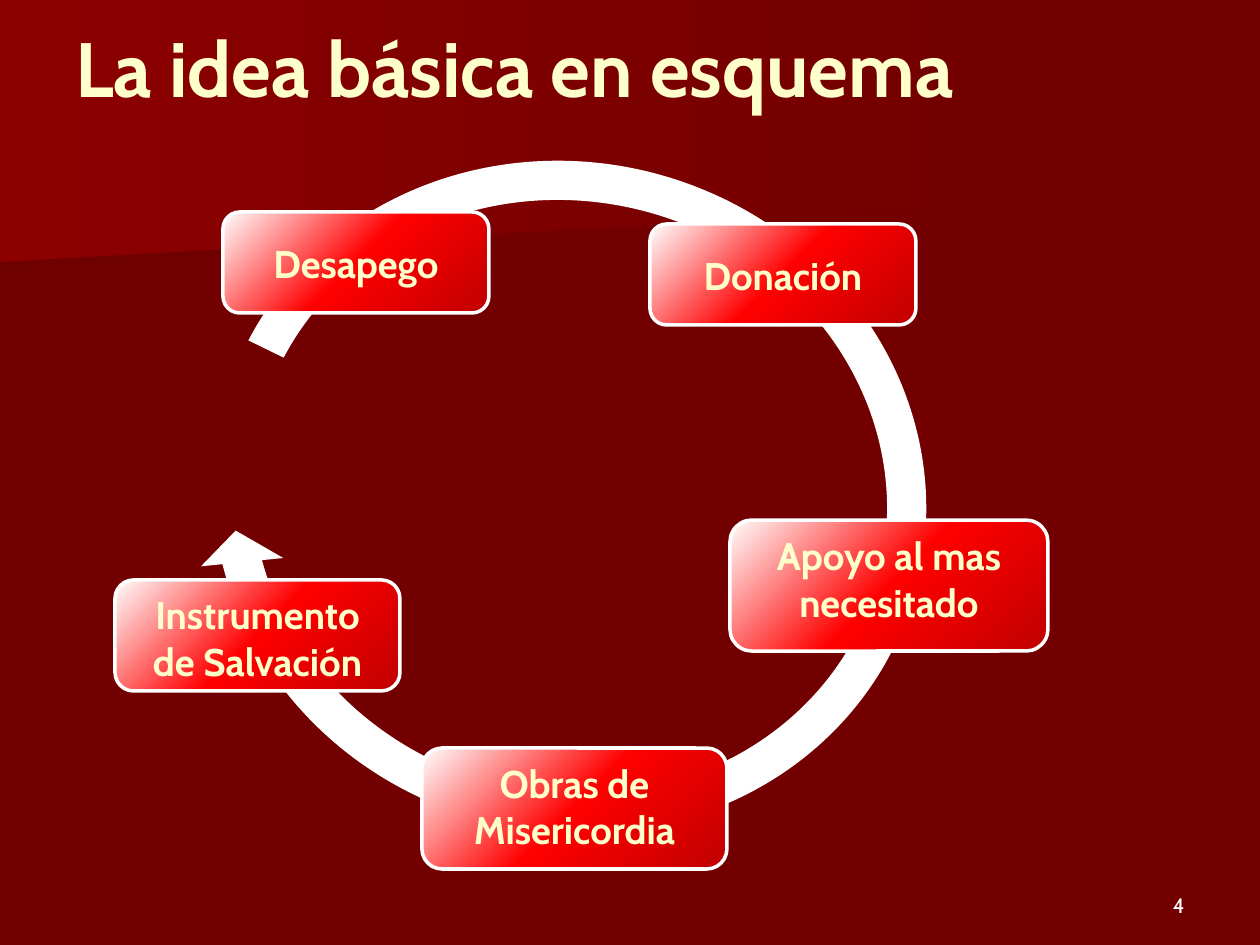
"""Build the slide with the cycle of five ideas around a circular arrow."""
from copy import deepcopy

from pptx import Presentation
from pptx.dml.color import RGBColor
from pptx.enum.shapes import MSO_SHAPE
from pptx.enum.text import MSO_ANCHOR, PP_ALIGN
from pptx.oxml.ns import qn
from pptx.util import Pt

PX = 914400 / 126
FONT = "Cabin"
COLORS = {
    "back": "720000", "shade": "6F0000", "glow": "8C0000", "white": "FFFFFF",
    "cream": "FFFFCC", "dark": "C00000", "red": "FF0000",
}
TITLE = "La idea básica en esquema"
PAGE_NUMBER = "4"
BACKDROP = [
    ([(980, 193), (0, 273), (0, 127), (982, 127), (980, 161)], "shade"),
    ([(998, 204), (0, 262), (0, 0), (998, 0)], "glow"),
]
ARROW = (213, 117, 713, 760)
ARROW_TURN = 284.7
ARROW_ADJUSTMENTS = [0.055, 3.307, 146.426, 168.78, 0.058]
STEPS = [
    ("Desapego", (223, 212, 266, 101), 17),
    ("Donación", (650, 224, 266, 101), 17),
    ("Apoyo al mas necesitado", (730, 520, 318, 131), 0),
    ("Obras de Misericordia", (422, 748, 305, 121), 0),
    ("Instrumento de Salvación", (115, 580, 285, 111), 0),
]
INSET = 6


def emu(*lengths):
    return [round(length * PX) for length in lengths]


def color(name):
    return RGBColor.from_string(COLORS[name])


def paint_gradient(shape, names, angle):
    shape.fill.gradient()
    shape.fill.gradient_angle = (360 - angle) % 360
    stop_list = shape._element.spPr.find(".//" + qn("a:gsLst"))
    while len(stop_list) < len(names):
        stop_list.append(deepcopy(stop_list[-1]))
    for index, (stop, name) in enumerate(zip(shape.fill.gradient_stops, names)):
        stop.position = index / (len(names) - 1)
        stop.color.rgb = color(name)


def write(box, text, size=22, ink="cream", bold=True, align=PP_ALIGN.CENTER,
          anchor=MSO_ANCHOR.TOP, top=INSET):
    frame = box.text_frame
    frame.word_wrap = True
    frame.vertical_anchor = anchor
    frame.margin_top, frame.margin_bottom = emu(top, INSET)
    para = frame.paragraphs[0]
    para.alignment = align
    span = para.add_run()
    span.text = text
    span.font.name, span.font.size, span.font.bold = FONT, Pt(size), bold
    span.font.color.rgb = color(ink)


def add_backdrop(page):
    page.background.fill.solid()
    page.background.fill.fore_color.rgb = color("back")
    for points, start in BACKDROP:
        builder = page.shapes.build_freeform(*points[0], scale=PX)
        builder.add_line_segments(points[1:], close=True)
        panel = builder.convert_to_shape()
        panel.shadow.inherit = False
        panel.line.fill.background()
        paint_gradient(panel, [start, "back"], 0)


def add_arrow(page):
    arrow = page.shapes.add_shape(MSO_SHAPE.CIRCULAR_ARROW, *emu(*ARROW))
    arrow.rotation = ARROW_TURN
    for index, value in enumerate(ARROW_ADJUSTMENTS):
        arrow.adjustments[index] = value
    arrow.shadow.inherit = False
    arrow.fill.solid()
    arrow.fill.fore_color.rgb = color("white")
    arrow.line.fill.background()


def add_step(page, text, place, lead):
    box = page.shapes.add_shape(MSO_SHAPE.ROUNDED_RECTANGLE, *emu(*place))
    box.shadow.inherit = False
    paint_gradient(box, ["dark", "red", "white"], 225)
    box.line.color.rgb = color("white")
    box.line.width = Pt(2)
    write(box, text, top=INSET + lead)


def main():
    deck = Presentation()
    deck.slide_width, deck.slide_height = emu(1260, 945)
    page = deck.slides.add_slide(deck.slide_layouts[6])
    add_backdrop(page)
    title = page.shapes.add_textbox(*emu(63, 35, 1134, 158))
    write(title, TITLE, size=44, align=PP_ALIGN.LEFT, top=-15)
    number = page.shapes.add_textbox(*emu(903, 861, 294, 63))
    write(number, PAGE_NUMBER, size=12, ink="white", bold=False,
          align=PP_ALIGN.RIGHT, anchor=MSO_ANCHOR.BOTTOM)
    add_arrow(page)
    for text, place, lead in STEPS:
        add_step(page, text, place, lead)
    deck.save("out.pptx")


if __name__ == "__main__":
    main()
